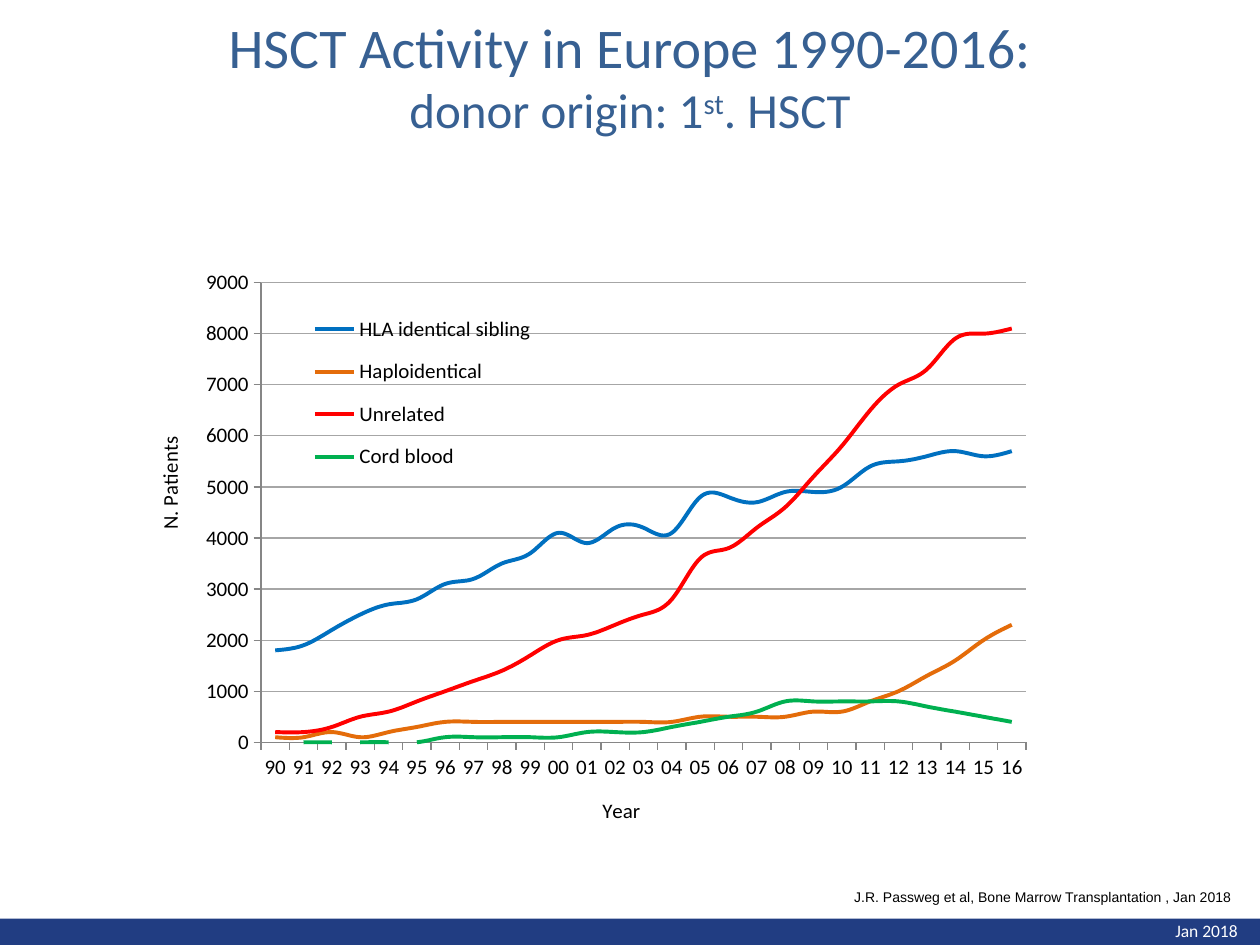
from lxml.etree import SubElement
from pptx import Presentation
from pptx.chart.data import CategoryChartData
from pptx.dml.color import RGBColor
from pptx.enum.chart import XL_CHART_TYPE, XL_LEGEND_POSITION, XL_TICK_MARK
from pptx.enum.shapes import MSO_SHAPE
from pptx.enum.text import MSO_ANCHOR, PP_ALIGN
from pptx.oxml.ns import qn
from pptx.util import Pt

WHITE = RGBColor(0xFF, 0xFF, 0xFF)
BLACK = RGBColor(0, 0, 0)
NAVY = RGBColor(0x21, 0x3D, 0x82)
TITLE_BLUE = RGBColor(0x37, 0x60, 0x92)
GRID_GREY = RGBColor(0xA6, 0xA6, 0xA6)
AXIS_GREY = RGBColor(0x86, 0x86, 0x86)
BLUE = RGBColor(0x00, 0x70, 0xC0)
ORANGE = RGBColor(0xE4, 0x6C, 0x0A)
RED = RGBColor(0xFF, 0, 0)
GREEN = RGBColor(0x00, 0xB0, 0x50)

HEADING = "HSCT Activity in Europe 1990-2016:"
SUBHEADING = [("donor origin: 1", False), ("st", True), (". HSCT", False)]
CITATION = "J.R. Passweg et al, Bone Marrow Transplantation , Jan 2018"
DATE = "Jan 2018"
YEARS = [f"{year % 100:02d}" for year in range(1990, 2017)]
DONORS = [
    ("HLA identical sibling", BLUE,
     [1800, 1900, 2200, 2500, 2700, 2800, 3100, 3200, 3500, 3700, 4100, 3900, 4200, 4200,
      4100, 4800, 4800, 4700, 4900, 4900, 5000, 5400, 5500, 5600, 5700, 5600, 5700]),
    ("Haploidentical", ORANGE,
     [100, 100, 200, 100, 200, 300, 400, 400, 400, 400, 400, 400, 400, 400,
      400, 500, 500, 500, 500, 600, 600, 800, 1000, 1300, 1600, 2000, 2300]),
    ("Unrelated", RED,
     [200, 200, 300, 500, 600, 800, 1000, 1200, 1400, 1700, 2000, 2100, 2300, 2500,
      2800, 3600, 3800, 4200, 4600, 5200, 5800, 6500, 7000, 7300, 7900, 8000, 8100]),
    ("Cord blood", GREEN,
     [0, 0, 0, 0, 0, 0, 100, 100, 100, 100, 100, 200, 200, 200,
      300, 400, 500, 600, 800, 800, 800, 800, 800, 700, 600, 500, 400]),
]


def add_run(paragraph, text, size, color, font="Calibri"):
    run = paragraph.add_run()
    run.text = text
    run.font.size = Pt(size)
    run.font.name = font
    run.font.color.rgb = color
    return run


def add_box(slide, left, top, width, height, wrap=False):
    box = slide.shapes.add_textbox(Pt(left), Pt(top), Pt(width), Pt(height))
    box.text_frame.word_wrap = wrap
    return box.text_frame


def set_layout(parent, index, x, y, w=None, h=None, inner=False):
    for old in parent.findall(qn("c:layout")):
        parent.remove(old)
    layout = SubElement(parent, qn("c:layout"))
    parent.insert(index, layout)
    manual = SubElement(layout, qn("c:manualLayout"))
    settings = [("layoutTarget", "inner")] if inner else []
    settings += [("xMode", "edge"), ("yMode", "edge"), ("x", x), ("y", y)]
    if w is not None:
        settings += [("w", w), ("h", h)]
    for tag, value in settings:
        SubElement(manual, qn(f"c:{tag}")).set("val", str(value))


def style_axis(axis, title, x, y):
    axis.major_tick_mark = XL_TICK_MARK.OUTSIDE
    axis.minor_tick_mark = XL_TICK_MARK.NONE
    axis.format.line.color.rgb = AXIS_GREY
    axis.format.line.width = Pt(0.75)
    run = add_run(axis.axis_title.text_frame.paragraphs[0], title, 12, BLACK)
    run.font.bold = False
    set_layout(axis.axis_title._element, 1, x, y)


def add_donor_chart(slide):
    data = CategoryChartData()
    data.categories = YEARS
    for name, _, patients in DONORS:
        data.add_series(name, patients)
    chart = slide.shapes.add_chart(
        XL_CHART_TYPE.LINE, Pt(70.5), Pt(134), Pt(543), Pt(340), data).chart
    chart.has_title = False
    chart.font.size = Pt(12)
    chart.font.name = "Calibri"
    chart.font.color.rgb = BLACK
    chart.plots[0].vary_by_categories = False
    for series, (_, color, _) in zip(chart.plots[0].series, DONORS):
        series.smooth = True
        series.format.line.color.rgb = color
        series.format.line.width = Pt(2.25)

    style_axis(chart.category_axis, "Year", 0.5, 0.95)
    patients_axis = chart.value_axis
    style_axis(patients_axis, "N. Patients", 0.03, 0.34)
    patients_axis.minimum_scale = 0
    patients_axis.maximum_scale = 9000
    patients_axis.major_unit = 1000
    patients_axis.has_major_gridlines = True
    patients_axis.major_gridlines.format.line.color.rgb = GRID_GREY
    patients_axis.major_gridlines.format.line.width = Pt(0.75)

    chart.has_legend = True
    chart.legend.position = XL_LEGEND_POSITION.RIGHT
    chart.legend.include_in_layout = False
    set_layout(chart.legend._element, 1, 0.19, 0.11, 0.25, 0.32)
    plot_area = chart._chartSpace.chart.plotArea
    set_layout(plot_area, 0, 0.145, 0.082, 0.805, 0.783, inner=True)


def main():
    deck = Presentation()
    deck.slide_width, deck.slide_height = Pt(720), Pt(540)
    slide = deck.slides.add_slide(deck.slide_layouts[6])

    band = slide.shapes.add_shape(MSO_SHAPE.RECTANGLE, Pt(0), Pt(525), Pt(720), Pt(17))
    band.shadow.inherit = False
    band.fill.solid()
    band.fill.fore_color.rgb = NAVY
    band.line.fill.background()

    date = add_box(slide, 664.5, 522, 51, 19.5)
    add_run(date.paragraphs[0], DATE, 10, WHITE)

    title = add_box(slide, 0, 9.5, 720, 67.5, wrap=True)
    title.vertical_anchor = MSO_ANCHOR.MIDDLE
    heading = title.paragraphs[0]
    heading.alignment = PP_ALIGN.CENTER
    add_run(heading, HEADING, 32, TITLE_BLUE)
    heading.add_line_break()
    for text, raised in SUBHEADING:
        run = add_run(heading, text, 28, TITLE_BLUE)
        if raised:
            run._r.get_or_add_rPr().set("baseline", "30000")

    add_donor_chart(slide)

    citation = add_box(slide, 481, 504, 236, 17)
    add_run(citation.paragraphs[0], CITATION, 8, BLACK, "Arial")

    deck.save("out.pptx")


if __name__ == "__main__":
    main()
